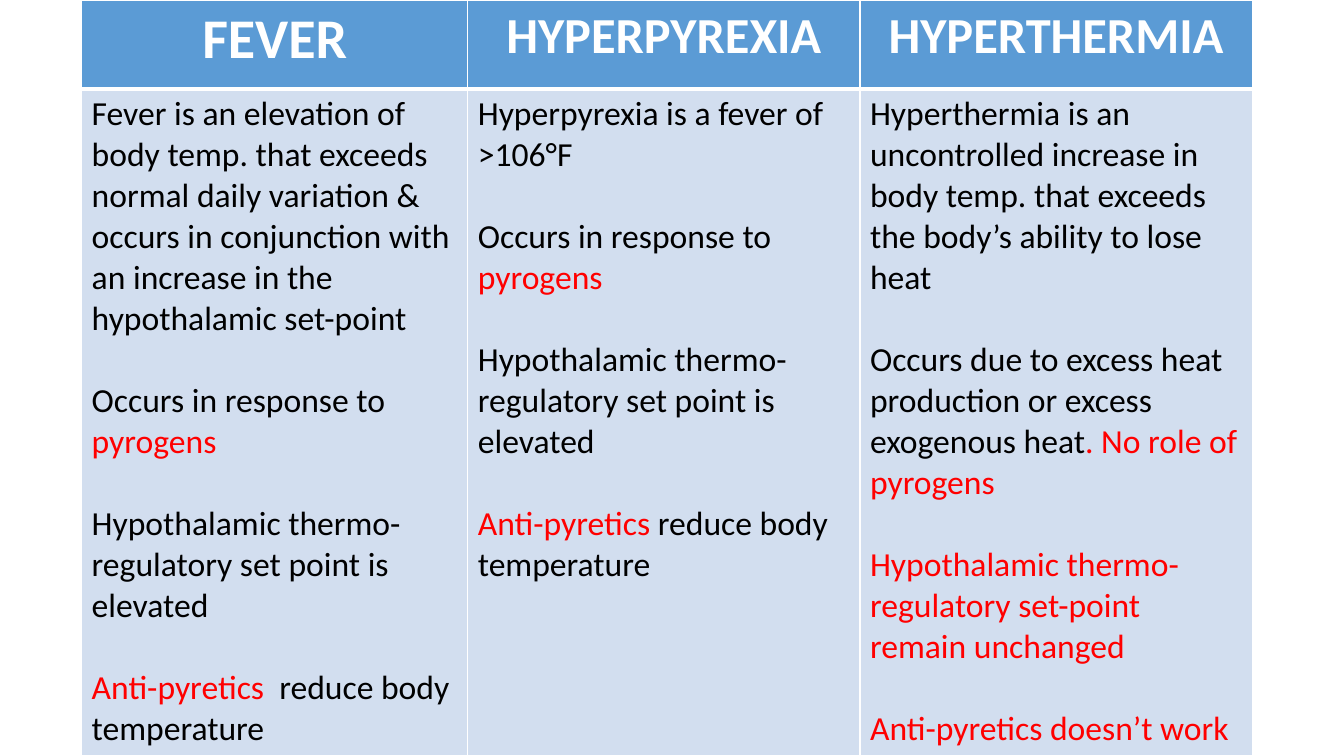
from dataclasses import dataclass

from lxml import etree
from pptx import Presentation
from pptx import util as u
from pptx.dml.color import RGBColor
from pptx.enum import text
from pptx.oxml import ns

COLORS = {
    "header": "5B9BD5",
    "body": "D2DEEF",
    "white": "FFFFFF",
    "black": "000000",
    "red": "FF0000",
}
FONT = "Calibri"
BODY_SIZE = 24
PARAGRAPH_GAP = 29.3
COLUMN_WIDTHS = (3.83, 3.89, 3.89)
ROW_HEIGHTS = (0.88, 6.62)


@dataclass(frozen=True)
class Span:
    words: str
    color: str = "black"


@dataclass(frozen=True)
class Condition:
    name: str
    name_size: int
    paragraphs: tuple[tuple[Span, ...], ...]


PYROGENS = (Span("Occurs in response to "), Span("pyrogens", "red"))
SET_POINT = (Span("Hypothalamic thermo-regulatory set point is elevated"),)

CONDITIONS = (
    Condition("FEVER", 40, (
        (Span("Fever is an elevation of body temp. that exceeds normal daily variation "
              "& occurs in conjunction with an increase in the hypothalamic set-point"),),
        PYROGENS,
        SET_POINT,
        (Span("Anti-pyretics  ", "red"), Span("reduce body temperature")),
    )),
    Condition("HYPERPYREXIA", 36, (
        (Span("Hyperpyrexia is a fever of >106°F"),),
        PYROGENS,
        SET_POINT,
        (Span("Anti-pyretics", "red"), Span(" reduce body temperature")),
    )),
    Condition("HYPERTHERMIA", 36, (
        (Span("Hyperthermia is an uncontrolled increase in body temp. that exceeds "
              "the body’s ability to lose heat"),),
        (Span("Occurs due to excess heat production or excess exogenous heat"),
         Span(". No role of pyrogens", "red")),
        (Span("Hypothalamic thermo-regulatory set-point remain unchanged", "red"),),
        (Span("Anti-pyretics doesn’t work", "red"),),
    )),
)


def rgb(name: str) -> RGBColor:
    return RGBColor.from_string(COLORS[name])


def add_span(para, words: str, *, size: float, color: str, bold: bool = False) -> None:
    span = para.add_run()
    span.text = words
    span.font.name = FONT
    span.font.size = u.Pt(size)
    span.font.bold = bold
    span.font.color.rgb = rgb(color)


def style_cell(cell, *, fill: str, top: float = 1, bottom: float = 1) -> None:
    properties = cell._tc.get_or_add_tcPr()
    for side, width in (("L", 1), ("R", 1), ("T", top), ("B", bottom)):
        line = etree.SubElement(properties, ns.qn(f"a:ln{side}"), w=str(u.Pt(width)))
        solid = etree.SubElement(line, ns.qn("a:solidFill"))
        etree.SubElement(solid, ns.qn("a:srgbClr"), val=COLORS["white"])
    cell.fill.solid()
    cell.fill.fore_color.rgb = rgb(fill)


def fill_column(table, column: int, condition: Condition) -> None:
    header = table.cell(0, column)
    style_cell(header, fill="header", bottom=3)
    para = header.text_frame.paragraphs[0]
    para.alignment = text.PP_ALIGN.CENTER
    add_span(para, condition.name, size=condition.name_size, color="white", bold=True)

    body = table.cell(1, column)
    style_cell(body, fill="body", top=3)
    for index, spans in enumerate(condition.paragraphs):
        if index == 0:
            para = body.text_frame.paragraphs[0]
        else:
            para = body.text_frame.add_paragraph()
            para.space_before = u.Pt(PARAGRAPH_GAP)
        for span in spans:
            add_span(para, span.words, size=BODY_SIZE, color=span.color)


def main() -> None:
    deck = Presentation()
    deck.slide_width, deck.slide_height = u.Inches(13.33), u.Inches(7.5)
    page = deck.slides.add_slide(deck.slide_layouts[6])
    table = page.shapes.add_table(
        len(ROW_HEIGHTS), len(CONDITIONS), u.Inches(0.81), u.Inches(0),
        u.Inches(sum(COLUMN_WIDTHS)), u.Inches(sum(ROW_HEIGHTS)),
    ).table
    for row, height in zip(table.rows, ROW_HEIGHTS):
        row.height = u.Inches(height)
    for index, (width, condition) in enumerate(zip(COLUMN_WIDTHS, CONDITIONS)):
        table.columns[index].width = u.Inches(width)
        fill_column(table, index, condition)
    deck.save("out.pptx")


if __name__ == "__main__":
    main()
